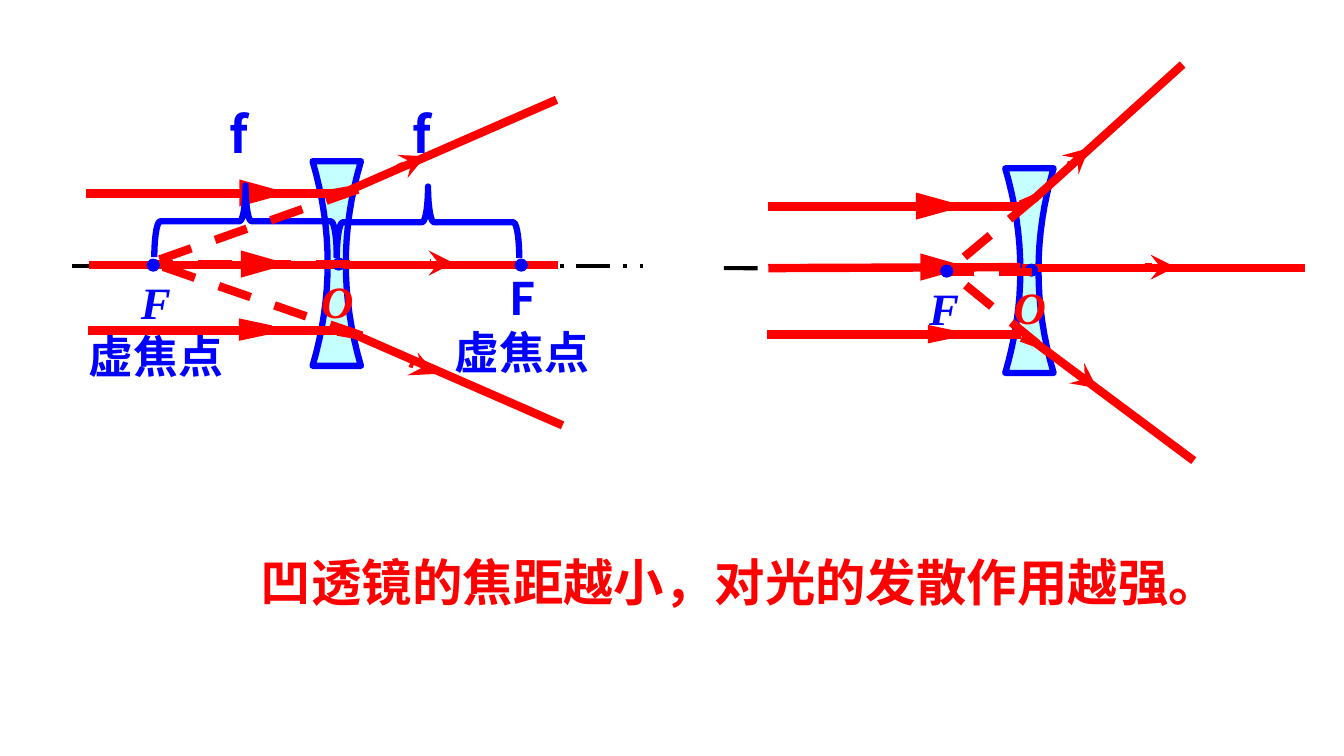
from dataclasses import dataclass
from typing import Any

from lxml.etree import SubElement
from pptx import Presentation
from pptx.dml.color import RGBColor
from pptx.enum.dml import MSO_LINE_DASH_STYLE as Dash
from pptx.enum.shapes import MSO_CONNECTOR as Connector, MSO_SHAPE as Shape
from pptx.enum.text import MSO_AUTO_SIZE as AutoSize, PP_ALIGN as Align
from pptx.oxml.ns import qn
from pptx.util import Inches, Pt

COLORS = {"red": "FF0000", "blue": "0000FF", "black": "000000", "glass": "C5FFFF", "white": "FFFFFF"}
SERIF, SANS_JP, SANS_SC = "Times New Roman", "Noto Sans CJK JP", "Noto Sans CJK SC"
LENS_HEIGHT, LENS_STEPS = 2.03, 16
HALF_WAIST, HALF_FLARE = 0.09, 0.15
DOT = 0.12

Point = tuple[float, float]


@dataclass
class Line:
    start: Point
    end: Point
    color: str = "red"
    width: float = 6
    dash: Any = None
    arrow: bool = False


@dataclass
class Outline:
    points: list[Point]
    color: str = "red"
    width: float = 6
    fill: str | None = None
    closed: bool = False


@dataclass
class Preset:
    kind: Any
    frame: tuple[float, float, float, float]
    color: str
    width: float
    filled: bool = True
    rotation: float = 0


@dataclass
class Words:
    text: str
    font: str
    size: float = 32
    color: str = "blue"
    italic: bool = False


@dataclass
class Label:
    frame: tuple[float, float, float, float]
    words: list[Words]
    align: Any = Align.CENTER


def rgb(name: str) -> RGBColor:
    return RGBColor.from_string(COLORS[name])


def apply(target: Any, values: dict[str, Any]) -> None:
    for name, value in values.items():
        setattr(target, name, value)


def style_line(line: Any, color: str, width: float) -> None:
    line.fill.solid()
    line.fill.fore_color.rgb = rgb(color)
    line.width = Pt(width)


def style_fill(fill: Any, color: str | None) -> None:
    if color is None:
        fill.background()
    else:
        fill.solid()
        fill.fore_color.rgb = rgb(color)


def draw_line(page: Any, item: Line) -> None:
    ends = [Inches(value) for value in (*item.start, *item.end)]
    connector = page.shapes.add_connector(Connector.STRAIGHT, *ends)
    style_line(connector.line, item.color, item.width)
    if item.dash:
        connector.line.dash_style = item.dash
    properties = connector._element.spPr
    if item.arrow:
        SubElement(properties.find(qn("a:ln")), qn("a:tailEnd"), type="stealth")
    SubElement(properties, qn("a:effectLst"))


def draw_outline(page: Any, item: Outline) -> None:
    first, *rest = [(Inches(x), Inches(y)) for x, y in item.points]
    builder = page.shapes.build_freeform(*first)
    builder.add_line_segments(rest, close=item.closed)
    shape = builder.convert_to_shape()
    shape.shadow.inherit = False
    style_fill(shape.fill, item.fill)
    style_line(shape.line, item.color, item.width)


def draw_preset(page: Any, item: Preset) -> None:
    shape = page.shapes.add_shape(item.kind, *map(Inches, item.frame))
    shape.shadow.inherit = False
    shape.rotation = item.rotation
    style_fill(shape.fill, item.color if item.filled else None)
    style_line(shape.line, item.color, item.width)
    if item.kind == Shape.ISOSCELES_TRIANGLE:
        SubElement(shape._element.spPr.find(qn("a:ln")), qn("a:miter"), lim="800000")


def draw_label(page: Any, item: Label) -> None:
    box = page.shapes.add_textbox(*map(Inches, item.frame))
    apply(box.text_frame, {"word_wrap": True, "auto_size": AutoSize.SHAPE_TO_FIT_TEXT})
    for index, words in enumerate(item.words):
        para = box.text_frame.add_paragraph() if index else box.text_frame.paragraphs[0]
        para.alignment = item.align
        span = para.add_run()
        span.text = words.text
        apply(span.font, {"name": words.font, "size": Pt(words.size), "bold": True, "italic": words.italic})
        span.font.color.rgb = rgb(words.color)
        SubElement(span.font._element, qn("a:ea"), typeface=words.font)


def axis(start: Point, end: Point) -> Line:
    return Line(start, end, "black", 3, Dash.LONG_DASH_DOT)


def lens(center: float, top: float) -> Outline:
    steps = [index / LENS_STEPS for index in range(LENS_STEPS + 1)]
    side = [(HALF_WAIST + HALF_FLARE * (2 * step - 1) ** 2, top + LENS_HEIGHT * step) for step in steps]
    right = [(center + offset, y) for offset, y in side]
    left = [(center - offset, y) for offset, y in reversed(side)]
    return Outline(right + left, "blue", 4.5, "glass", True)


def arrow(start: Point, end: Point) -> Line:
    return Line(start, end, arrow=True)


def dashed(start: Point, end: Point) -> Line:
    return Line(start, end, dash=Dash.DASH)


def marker(left: float, top: float, width: float = 0.16, height: float = 0.28) -> Preset:
    return Preset(Shape.ISOSCELES_TRIANGLE, (left, top, width, height), "red", 6, rotation=90)


def dot(left: float, top: float) -> Preset:
    return Preset(Shape.OVAL, (left, top, DOT, DOT), "blue", 0.75)


def brace(left: float, top: float) -> Preset:
    return Preset(Shape.LEFT_BRACE, (left, top, 0.71, 1.81), "blue", 4.5, False, 90)


def point_name(text: str, left: float, top: float, color: str) -> Label:
    return Label((left, top, 0.67, 0.63), [Words(text, SERIF, color=color, italic=True)])


def focal_length(left: float) -> Label:
    return Label((left, 0.97, 0.48, 0.71), [Words("f", SANS_JP, 36)], Align.LEFT)


FOCUS = Words("虚焦点", SANS_SC)

WEAK_LENS = [
    lens(3.34, 1.6), axis((0.71, 2.64), (6.38, 2.64)),
    Outline([(3.28, 1.92), (3.46, 1.89), (5.52, 0.99)]), arrow((3.95, 1.67), (4.22, 1.55)),
    Outline([(3.35, 3.29), (3.52, 3.32), (5.58, 4.22)]), arrow((4.07, 3.6), (4.32, 3.71)),
    Line((3.27, 2.63), (5.53, 2.63)), arrow((4.26, 2.61), (4.5, 2.61)),
    Line((0.85, 1.92), (3.37, 1.92)), marker(2.48, 1.77, height=0.29),
    Line((0.87, 3.28), (3.38, 3.28)), marker(2.49, 3.13, 0.12),
    Line((0.88, 2.63), (3.38, 2.63)), marker(2.49, 2.48),
    dot(3.3, 2.56), point_name("O", 3.01, 2.67, "red"),
    brace(2.08, 1.29), focal_length(2.18),
    dot(5.11, 2.57), Label((4.3, 2.64, 1.76, 1.18), [Words("F", SANS_SC), FOCUS]),
    brace(3.89, 1.3), focal_length(3.99),
    dashed((3.59, 3.33), (1.54, 2.62)), dashed((3.55, 1.88), (1.54, 2.59)), dashed((3.47, 2.62), (1.5, 2.62)),
    dot(1.46, 2.57), Label((0.58, 2.68, 1.93, 1.18), [Words("F", SERIF, italic=True), FOCUS]),
]
STRONG_LENS = [
    axis((7.18, 2.66), (12.85, 2.67)), lens(10.21, 1.67),
    Outline([(10.12, 2.03), (10.26, 1.97), (11.73, 0.64)]), arrow((10.61, 1.64), (10.8, 1.47)),
    Outline([(10.13, 3.35), (10.27, 3.4), (11.84, 4.57)]), arrow((10.69, 3.71), (10.88, 3.85)),
    Line((10.14, 2.66), (12.94, 2.66)), arrow((11.36, 2.65), (11.66, 2.65)),
    Line((7.62, 2.05), (10.14, 2.05)), marker(9.19, 1.9, height=0.29),
    Line((7.61, 3.32), (10.13, 3.32)), marker(9.3, 3.22, 0.08, 0.19),
    Line((7.62, 2.66), (10.12, 2.65)), marker(9.23, 2.51),
    dot(10.17, 2.62), point_name("O", 9.88, 2.73, "red"),
    dashed((10.29, 3.41), (9.42, 2.7)), dashed((10.27, 1.96), (9.42, 2.67)), dashed((10.24, 2.7), (9.41, 2.7)),
    dot(9.33, 2.63), point_name("F", 9.03, 2.74, "blue"),
]
CONCLUSION = Label((2.49, 5.42, 9.91, 0.71), [Words("凹透镜的焦距越小，对光的发散作用越强。", SANS_JP, 36, "red")], Align.LEFT)
DRAW = {Line: draw_line, Outline: draw_outline, Preset: draw_preset, Label: draw_label}

deck = Presentation()
apply(deck, {"slide_width": Inches(13.33), "slide_height": Inches(7.5)})
page = deck.slides.add_slide(deck.slide_layouts[6])
style_fill(page.background.fill, "white")
for item in [*WEAK_LENS, *STRONG_LENS, CONCLUSION]:
    DRAW[type(item)](page, item)
deck.save("out.pptx")
